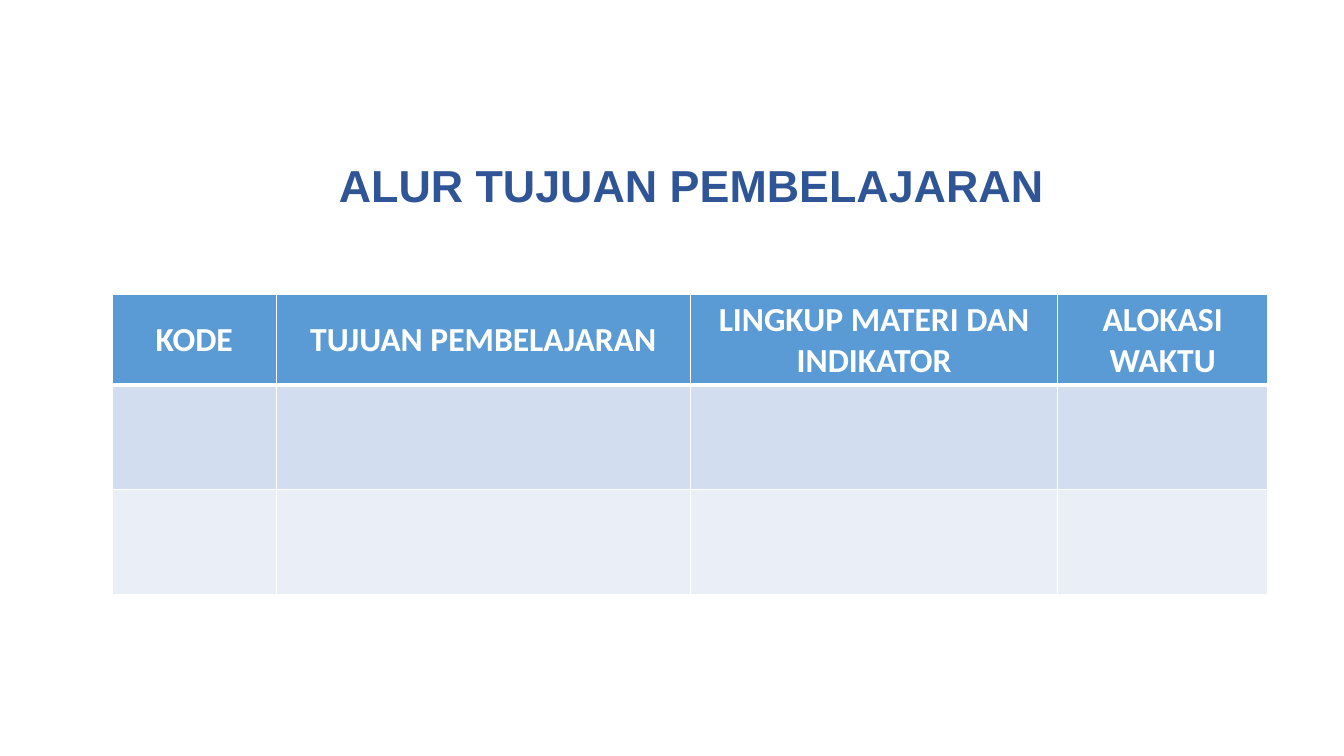
from lxml import etree
from pptx import Presentation
from pptx.dml.color import RGBColor
from pptx.enum import text
from pptx.oxml import ns
from pptx.util import Pt

TITLE_BLUE = RGBColor(0x2F, 0x55, 0x97)
HEADER_BLUE = RGBColor(0x5B, 0x9B, 0xD5)
BAND_DARK = RGBColor(0xD2, 0xDE, 0xEF)
BAND_LIGHT = RGBColor(0xEA, 0xEF, 0xF7)
WHITE = RGBColor(0xFF, 0xFF, 0xFF)

HEADINGS = ["KODE", "TUJUAN PEMBELAJARAN", "LINGKUP MATERI DAN INDIKATOR", "ALOKASI WAKTU"]
COLUMN_WIDTHS = [117.2, 295.7, 262.6, 149.8]
ROW_HEIGHTS = [61.2, 74.7, 74.7]
ROW_FILLS = [HEADER_BLUE, BAND_DARK, BAND_LIGHT]


def add_centred_run(paragraph, words, font_name, size, color):
    paragraph.alignment = text.PP_ALIGN.CENTER
    run = paragraph.add_run()
    run.text = words
    run.font.name = font_name
    run.font.size = Pt(size)
    run.font.bold = True
    run.font.color.rgb = color


def add_border(cell, side, width):
    properties = cell._tc.get_or_add_tcPr()
    line = etree.SubElement(properties, ns.qn(f"a:ln{side}"), w=str(Pt(width)))
    fill = etree.SubElement(line, ns.qn("a:solidFill"))
    etree.SubElement(fill, ns.qn("a:srgbClr"), val=str(WHITE))


presentation = Presentation()
presentation.slide_width = Pt(960)
presentation.slide_height = Pt(540)
slide = presentation.slides.add_slide(presentation.slide_layouts[6])

# Title
title = slide.shapes.add_textbox(Pt(219.6), Pt(109.4), Pt(548.6), Pt(46))
title.text_frame.word_wrap = True
add_centred_run(title.text_frame.paragraphs[0], "ALUR TUJUAN PEMBELAJARAN", "Arial", 32, TITLE_BLUE)

# Table grid
table = slide.shapes.add_table(
    len(ROW_HEIGHTS), len(COLUMN_WIDTHS),
    Pt(80.2), Pt(210.4), Pt(sum(COLUMN_WIDTHS)), Pt(sum(ROW_HEIGHTS)),
).table
for column, width in zip(table.columns, COLUMN_WIDTHS):
    column.width = Pt(width)

# Row heights, borders and fills
for row_index, (row, height, color) in enumerate(zip(table.rows, ROW_HEIGHTS, ROW_FILLS)):
    row.height = Pt(height)
    for cell in row.cells:
        for side in "LRTB":
            under_header = (row_index, side) in [(0, "B"), (1, "T")]
            add_border(cell, side, 3 if under_header else 1)
        cell.fill.solid()
        cell.fill.fore_color.rgb = color

# Column headings
for cell, heading in zip(table.rows[0].cells, HEADINGS):
    cell.vertical_anchor = text.MSO_ANCHOR.MIDDLE
    add_centred_run(cell.text_frame.paragraphs[0], heading, "Calibri", 24, WHITE)

presentation.save("out.pptx")
